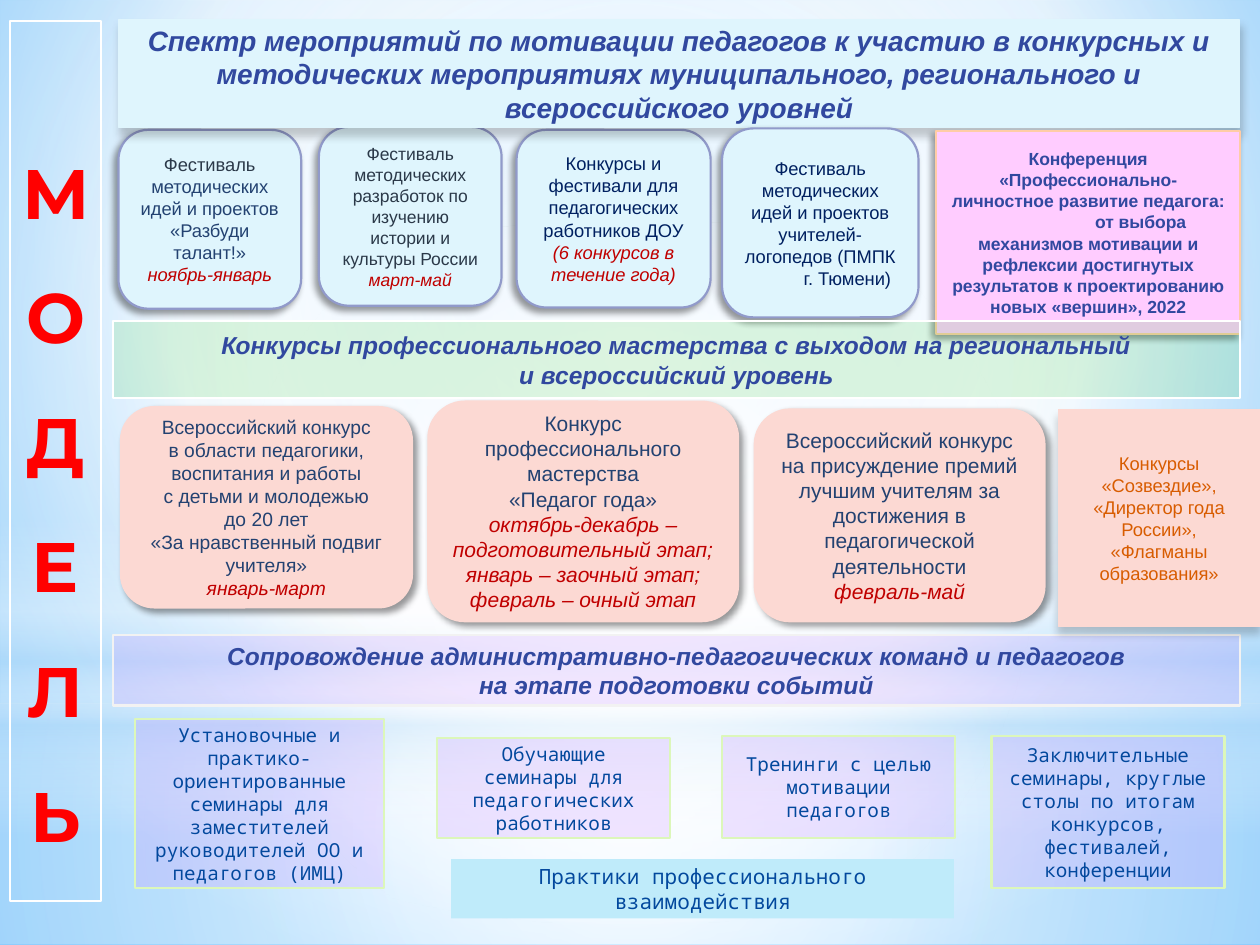
from dataclasses import dataclass, replace

from pptx import Presentation
from pptx.dml.color import RGBColor
from pptx.enum.shapes import MSO_SHAPE
from pptx.enum.text import MSO_ANCHOR, MSO_AUTO_SIZE, PP_ALIGN
from pptx.oxml import parse_xml
from pptx.oxml.ns import nsdecls, qn
from pptx.util import Pt

C = {
    "white": "FFFFFF", "pale": "B4DCFA", "sky": "9ED5FF", "azure": "5BB9FF",
    "ice": "DFF5FD", "aqua": "BFEBFA", "periwinkle": "919ACA", "peach": "FCD9D3",
    "pink": "FFCCFF", "apricot": "FFCCA6", "lilac": "CC99FF", "lime": "DCF7BA",
    "green": "33CC33", "grey": "F2F2F2", "black": "000000", "red": "FF0000",
    "date": "C00000", "slate": "2B3949", "navy": "234271", "deep": "002060",
    "indigo": "31489F", "blue": "02489D", "orange": "D85C00",
}


@dataclass
class Run:
    """Text that departs from its panel's style."""
    text: str
    color: str
    italic: bool = False


@dataclass
class Indented:
    """A paragraph pushed to the right by a left margin."""
    text: str
    left: float


@dataclass
class Style:
    fill: str = None
    line: str = None
    width: float = 1.25
    alpha: int = 100
    shadow: tuple = None  # opacity %, blur, distance, direction
    font: str = "Arial"
    size: float = 10.5
    color: str = "navy"
    bold: bool = False
    italic: bool = False


LEFT_SHADOW, RIGHT_SHADOW, LOW_SHADOW = (40, 4, 3, 135), (40, 4, 3, 45), (20, 5, 4, 90)
FESTIVAL = Style("ice", "periwinkle", shadow=LEFT_SHADOW)
CONTEST = Style("peach", "peach", shadow=RIGHT_SHADOW, size=12)
HEADING = Style("ice", "ice", 0.75, shadow=LOW_SHADOW, size=16,
                color="indigo", bold=True, italic=True)
BAND = replace(HEADING, width=1.25, shadow=None, size=14)
SEMINAR = Style("lilac", "lime", alpha=25, font="Noto Sans Mono", size=11, color="blue")
RECT, ROUND = MSO_SHAPE.RECTANGLE, MSO_SHAPE.ROUNDED_RECTANGLE
SOFT = MSO_SHAPE.FLOWCHART_ALTERNATE_PROCESS
CENTER = (50, 50, 50, 50)


def rgb(name):
    return RGBColor.from_string(C[name])


def date(text):
    return Run(text, "date", True)


def gradient(stops, focus=None):
    """Stops are (position, colour, opacity); without a focus it runs downwards."""
    gs = "".join(
        f'<a:gs pos="{pos * 1000}"><a:srgbClr val="{C[c]}"><a:alpha val="{a * 1000}"/>'
        f'</a:srgbClr></a:gs>' for pos, c, a in stops)
    way = '<a:lin ang="5400000" scaled="0"/>'
    if focus:
        sides = " ".join(f'{k}="{v * 1000}"' for k, v in zip("ltrb", focus))
        way = f'<a:path path="circle"><a:fillToRect {sides}/></a:path>'
    return parse_xml(f'<a:gradFill {nsdecls("a")} rotWithShape="1">'
                     f'<a:gsLst>{gs}</a:gsLst>{way}</a:gradFill>')


class Deck:
    def __init__(self, width, height):
        self.prs = Presentation()
        self.prs.slide_width, self.prs.slide_height = Pt(width), Pt(height)
        self.s = self.prs.slides.add_slide(self.prs.slide_layouts[5])

    def background(self, stops, focus):
        self.s.background.fill.solid()
        bg = self.s._element.find(".//" + qn("p:bgPr"))
        bg.replace(bg[0], gradient(stops, focus))

    def glow(self, kind, box, stops, focus=None):
        sp = self.s.shapes.add_shape(kind, *map(Pt, box))
        sp.shadow.inherit = False
        sp.line.fill.background()
        sp.fill.solid()
        pr = sp._element.spPr
        pr.replace(pr.find(qn("a:solidFill")), gradient(stops, focus))

    def panel(self, kind, box, style, paras):
        sp = self.s.shapes.add_shape(kind, *map(Pt, box))
        self.dress(sp, style)
        self.put_text(sp.text_frame, style, paras)
        return sp

    def title(self, box, style, text):
        sp = self.s.shapes.title
        sp.left, sp.top, sp.width, sp.height = map(Pt, box)
        self.s.shapes._spTree.append(sp._element)  # bring to front
        self.dress(sp, style)
        self.put_text(sp.text_frame, style, [text])

    def dress(self, sp, style):
        """Set fill, line and shadow."""
        if style.fill:
            sp.fill.solid()
            sp.fill.fore_color.rgb = rgb(style.fill)
            if style.alpha < 100:
                clr = sp._element.spPr.find(qn("a:solidFill"))[0]
                clr.append(parse_xml(f'<a:alpha {nsdecls("a")} val="{style.alpha * 1000}"/>'))
        else:
            sp.fill.background()
        if style.line:
            sp.line.color.rgb = rgb(style.line)
            sp.line.width = Pt(style.width)
        else:
            sp.line.fill.background()
        sp.shadow.inherit = False
        if style.shadow:
            opacity, blur, dist, angle = style.shadow
            sp._element.spPr.find(qn("a:effectLst")).append(parse_xml(
                f'<a:outerShdw {nsdecls("a")} blurRad="{Pt(blur)}" dist="{Pt(dist)}" '
                f'dir="{angle * 60000}" rotWithShape="0"><a:srgbClr val="{C["black"]}">'
                f'<a:alpha val="{opacity * 1000}"/></a:srgbClr></a:outerShdw>'))

    def put_text(self, tf, style, paras):
        tf.word_wrap = True
        tf.auto_size = MSO_AUTO_SIZE.NONE
        tf.vertical_anchor = MSO_ANCHOR.MIDDLE
        for i, para in enumerate(paras):
            p = tf.add_paragraph() if i else tf.paragraphs[0]
            p.alignment = PP_ALIGN.CENTER
            if isinstance(para, Indented):
                p._p.get_or_add_pPr().set("marL", str(Pt(para.left)))
                para = para.text
            for part in para if isinstance(para, list) else [para]:
                if isinstance(part, str):
                    part = Run(part, style.color, style.italic)
                r = p.add_run()
                r.text = part.text
                r.font.name, r.font.size = style.font, Pt(style.size)
                r.font.bold, r.font.italic = style.bold, part.italic
                r.font.color.rgb = rgb(part.color)


def main():
    d = Deck(720, 540)
    d.background([(0, "sky", 100), (60, "white", 100), (100, "azure", 100)], (20, 10, 20, 60))
    d.glow(RECT, (0, 402, 720, 138),
           [(0, "white", 91), (37, "white", 76), (100, "pale", 79)], CENTER)
    d.glow(RECT, (0, 0, 720, 402),
           [(0, "white", 89), (48, "white", 62), (100, "pale", 79)], CENTER)
    d.glow(RECT, (0, 297, 720, 180),
           [(0, "white", 0), (29, "white", 30), (45, "pale", 40),
            (55, "white", 26), (65, "pale", 60), (100, "white", 0)])
    d.glow(MSO_SHAPE.OVAL, (0, 126, 720, 402), [(0, "white", 100), (56, "white", 0)], CENTER)

    d.panel(SOFT, (244.8, 229.5, 177, 125.5), CONTEST, [
        "Конкурс профессионального мастерства", "«Педагог года»",
        date("октябрь-декабрь – подготовительный этап;"),
        date("январь – заочный этап;"), date("февраль – очный этап")])
    d.panel(SOFT, (67.7, 74.2, 104.4, 102.2), FESTIVAL, [
        [Run("Фестиваль", "slate"), " методических идей и проектов «Разбуди талант!»"],
        date("ноябрь-январь")])
    d.panel(SOFT, (182.2, 72.5, 104.4, 102.2), replace(FESTIVAL, size=10, color="slate"), [
        "Фестиваль методических разработок по изучению истории и культуры России",
        date("март-май")])
    d.panel(SOFT, (431.3, 234, 165.6, 121), CONTEST, [
        "Всероссийский конкурс на присуждение премий лучшим учителям за достижения "
        "в педагогической деятельности", date("февраль-май")])
    d.panel(ROUND, (69.1, 232.6, 166.3, 114.5), replace(CONTEST, size=11), [
        "Всероссийский конкурс", "в области педагогики, воспитания и работы",
        "с детьми и молодежью", "до 20 лет", "«За нравственный подвиг учителя»",
        date("январь-март")])
    d.panel(ROUND, (295.2, 74.2, 110.9, 101.5), replace(FESTIVAL, color="deep"), [
        ["Конкурсы и фестивали для педагогических работников ДОУ ",
         date("(6 конкурсов в течение года)")]])

    letters = Style(None, "white", 1, font="Montserrat", size=40, color="red", bold=True)
    tf = d.panel(RECT, (5.8, 12.2, 51.8, 502.6), letters, "МОДЕЛЬ").text_frame
    tf.margin_top = Pt(51)
    for p in tf.paragraphs[1:]:
        p.space_before = Pt(23.2)

    d.title((67.7, 11.5, 640.8, 61.2), HEADING,
            "Спектр мероприятий по мотивации педагогов к участию в конкурсных и методических "
            "мероприятиях муниципального, регионального и всероссийского уровней")
    d.panel(RECT, (535, 74.9, 173.5, 115.9),
            Style("pink", "apricot", shadow=LEFT_SHADOW, size=10, color="indigo", bold=True), [
                "Конференция «Профессионально-личностное развитие педагога:",
                Indented("от выбора", 60),
                "механизмов мотивации и рефлексии достигнутых результатов к проектированию "
                "новых «вершин», 2022"])
    d.panel(RECT, (64.8, 362.9, 643.7, 40.3),
            replace(BAND, fill="lilac", line="grey", alpha=23), [
                "Сопровождение административно-педагогических команд и педагогов",
                "на этапе подготовки событий"])
    d.panel(ROUND, (412.6, 73.4, 112.3, 108), replace(FESTIVAL, color="deep"), [
        "Фестиваль методических идей и проектов учителей-логопедов (ПМПК",
        Indented("г. Тюмени)", 31)])

    for box, text in [
        ((249.8, 421.9, 133.2, 56.9), "Обучающие семинары для педагогических работников"),
        ((412.6, 420.5, 133.2, 58.3), "Тренинги с целью мотивации педагогов"),
        ((566.6, 420.5, 133.2, 87.1), "Заключительные семинары, круглые столы по итогам "
                                      "конкурсов, фестивалей, конференции"),
        ((77, 411.1, 142.6, 96.5), "Установочные и практико-ориентированные семинары для "
                                   "заместителей руководителей ОО и педагогов (ИМЦ)"),
    ]:
        d.panel(RECT, box, SEMINAR, [text])

    d.panel(RECT, (604.8, 234, 115.2, 124),
            Style("peach", "peach", 0.75, shadow=LOW_SHADOW, color="orange"), [
                "Конкурсы «Созвездие»,", "«Директор года России», «Флагманы образования»"])
    d.panel(RECT, (64.8, 183.6, 643.7, 43.9),
            replace(BAND, fill="green", line="white", alpha=15), [
                "Конкурсы профессионального мастерства с выходом на региональный",
                "и всероссийский уровень"])
    d.panel(RECT, (257.8, 491, 287.3, 33.8),
            replace(SEMINAR, fill="aqua", line=None, alpha=100, size=12),
            ["Практики профессионального взаимодействия"])
    d.prs.save("out.pptx")


if __name__ == "__main__":
    main()
